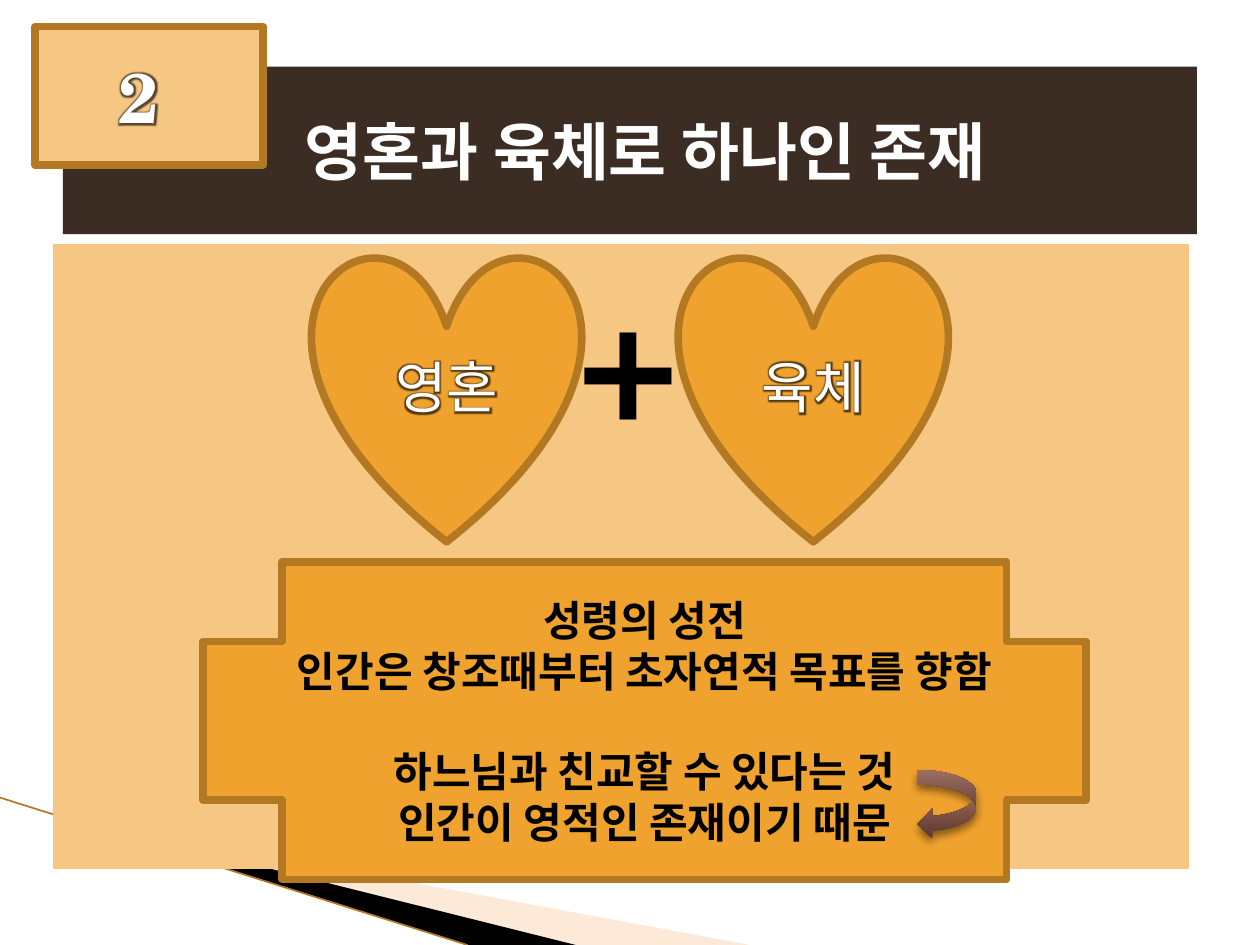
import pptx
import pptx.util
import pptx.dml.color
import pptx.enum.shapes
import pptx.enum.text
import pptx.oxml
import pptx.oxml.ns
from dataclasses import dataclass
from pptx.util import Inches

SHAPE = pptx.enum.shapes.MSO_SHAPE
ALIGN = pptx.enum.text.PP_ALIGN
ANCHOR = pptx.enum.text.MSO_ANCHOR
NS = pptx.oxml.ns.nsdecls("a")


@dataclass(frozen=True)
class Theme:
    font: str = "TeX Gyre Schola"
    black: str = "000000"
    white: str = "FFFFFF"
    dark: str = "3B2C24"
    sand: str = "F6C782"
    orange: str = "F0A22E"
    border: str = "B27822"
    peach: str = "FBC99E"
    arrow_stops: tuple = ((0, "59372F"), (50, "8D5B4D"), (70, "A36E60"), (100, "C68B7C"))
    border_width: float = 4.33
    plus_size: int = 96
    number_size: int = 40
    title_size: int = 36
    heart_size: int = 32
    message_size: int = 24


THEME = Theme()


def rgb(color):
    return pptx.dml.color.RGBColor.from_string(color)


def add_panel(slide, kind, box, fill, line=None, width=THEME.border_width):
    panel = slide.shapes.add_shape(kind, *map(Inches, box))
    panel.shadow.inherit = False
    panel.fill.solid()
    panel.fill.fore_color.rgb = rgb(fill)
    if line:
        panel.line.color.rgb = rgb(line)
        panel.line.width = pptx.util.Pt(width)
    else:
        panel.line.fill.background()
    return panel


def write(panel, text, size, color, bold=True, align=ALIGN.CENTER, anchor=ANCHOR.MIDDLE,
          left=0.1, right=0.1, glow=False, gap_before=None):
    """Write one paragraph per line; gap_before maps a line index to points."""
    frame = panel.text_frame
    frame.word_wrap = True
    frame.vertical_anchor = anchor
    frame.margin_left, frame.margin_right = Inches(left), Inches(right)
    for index, line in enumerate(text.split("\n")):
        paragraph = frame.paragraphs[0] if index == 0 else frame.add_paragraph()
        paragraph.alignment = align
        if gap_before and index in gap_before:
            paragraph.space_before = pptx.util.Pt(gap_before[index])
        run = paragraph.add_run()
        run.text = line
        run.font.size = pptx.util.Pt(size)
        run.font.bold = bold
        run.font.color.rgb = rgb(color)
        if glow:
            # The effect list follows the text fill
            run.font._element.append(pptx.oxml.parse_xml(
                f'<a:effectLst {NS}><a:glow rad="45500"><a:srgbClr val="{THEME.black}">'
                '<a:alpha val="65000"/></a:srgbClr></a:glow></a:effectLst>'))
        run.font.name = THEME.font


def add_wedge(slide, points, color, alpha=None):
    start, *rest = [(Inches(x), Inches(y)) for x, y in points]
    builder = slide.shapes.build_freeform(*start)
    builder.add_line_segments(rest, close=True)
    wedge = builder.convert_to_shape()
    wedge.shadow.inherit = False
    wedge.fill.solid()
    wedge.fill.fore_color.rgb = rgb(color)
    wedge.line.fill.background()
    if alpha:
        srgb = wedge.fill._xPr.find(".//" + pptx.oxml.ns.qn("a:srgbClr"))
        srgb.append(pptx.oxml.parse_xml(f'<a:alpha {NS} val="{alpha * 1000}"/>'))


def add_backdrop(slide, box):
    """Wedges and a thin line that sweep across the bottom left corner."""
    left, top, width, height = box
    bottom = top + height
    add_wedge(slide, [(left + 0.55, top + 0.17), (left + 5.95, bottom), (left + 4.56, bottom)],
              THEME.peach, alpha=40)
    add_wedge(slide, [(left + 0.53, top + 0.16), (left + 4.57, bottom), (left + 3.72, bottom)],
              THEME.black)
    edge = slide.shapes.add_connector(
        pptx.enum.shapes.MSO_CONNECTOR.STRAIGHT,
        Inches(left), Inches(top), Inches(left + 3.71), Inches(bottom))
    edge.line.color.rgb = rgb(THEME.border)
    edge.line.width = pptx.util.Pt(0.95)
    edge._element.spPr.append(pptx.oxml.parse_xml(f"<a:effectLst {NS}/>"))


def add_title(slide, box):
    banner = add_panel(slide, SHAPE.RECTANGLE, box, THEME.dark)
    write(banner, "영혼과 육체로 하나인 존재", THEME.title_size, THEME.white,
          align=ALIGN.LEFT, left=1.92)


def add_number(slide, box):
    badge = add_panel(slide, SHAPE.RECTANGLE, box, THEME.sand, THEME.border)
    write(badge, "2", THEME.number_size, THEME.white, right=0.27, glow=True)


def add_body(slide, box):
    """Sand panel with a plus sign between two hearts."""
    left, top = box[:2]
    panel = add_panel(slide, SHAPE.RECTANGLE, box, THEME.sand, THEME.sand, 0.75)
    write(panel, "+", THEME.plus_size, THEME.black, anchor=ANCHOR.TOP, left=0.22)
    for index, word in enumerate(("영혼", "육체")):
        heart = add_panel(slide, SHAPE.HEART,
                          (left + 2.05 + index * 2.91, top + 0.08, 2.13, 2.28),
                          THEME.orange, THEME.border)
        write(heart, word, THEME.heart_size, THEME.white, bold=False, glow=True)


def add_message(slide, box):
    """Cross with the message and a curved arrow linking its last two lines."""
    left, top = box[:2]
    cross = add_panel(slide, SHAPE.CROSS, box, THEME.orange, THEME.border)
    write(cross, "성령의 성전\n인간은 창조때부터 초자연적 목표를 향함\n"
                 "하느님과 친교할 수 있다는 것\n인간이 영적인 존재이기 때문",
          THEME.message_size, THEME.black, left=0, right=0, gap_before={2: 28.8})

    arrow = add_panel(slide, SHAPE.CURVED_LEFT_ARROW, (left + 5.67, top + 1.65, 0.47, 0.55),
                      THEME.dark)
    properties = arrow._element.spPr
    stops = "".join(f'<a:gs pos="{pos * 1000}"><a:srgbClr val="{color}"/></a:gs>'
                    for pos, color in THEME.arrow_stops)
    properties.replace(
        properties.find(pptx.oxml.ns.qn("a:solidFill")),
        pptx.oxml.parse_xml(f'<a:gradFill {NS}><a:gsLst>{stops}</a:gsLst>'
                            '<a:lin ang="16200000" scaled="0"/></a:gradFill>'))
    properties.find(pptx.oxml.ns.qn("a:effectLst")).append(pptx.oxml.parse_xml(
        f'<a:outerShdw {NS} blurRad="63500" dist="38100" dir="5400000" rotWithShape="0">'
        f'<a:srgbClr val="{THEME.black}"><a:alpha val="45000"/></a:srgbClr></a:outerShdw>'))


def main():
    deck = pptx.Presentation()
    deck.slide_width, deck.slide_height = Inches(10), Inches(7.5)
    slide = deck.slides.add_slide(deck.slide_layouts[6])
    add_backdrop(slide, (0, 6.33, 5.95, 1.17))
    add_body(slide, (0.43, 1.94, 9, 4.95))
    add_title(slide, (0.5, 0.53, 9, 1.33))
    add_message(slide, (1.61, 4.46, 7.01, 2.52))
    add_number(slide, (0.28, 0.21, 1.81, 1.1))
    deck.save("out.pptx")


if __name__ == "__main__":
    main()
